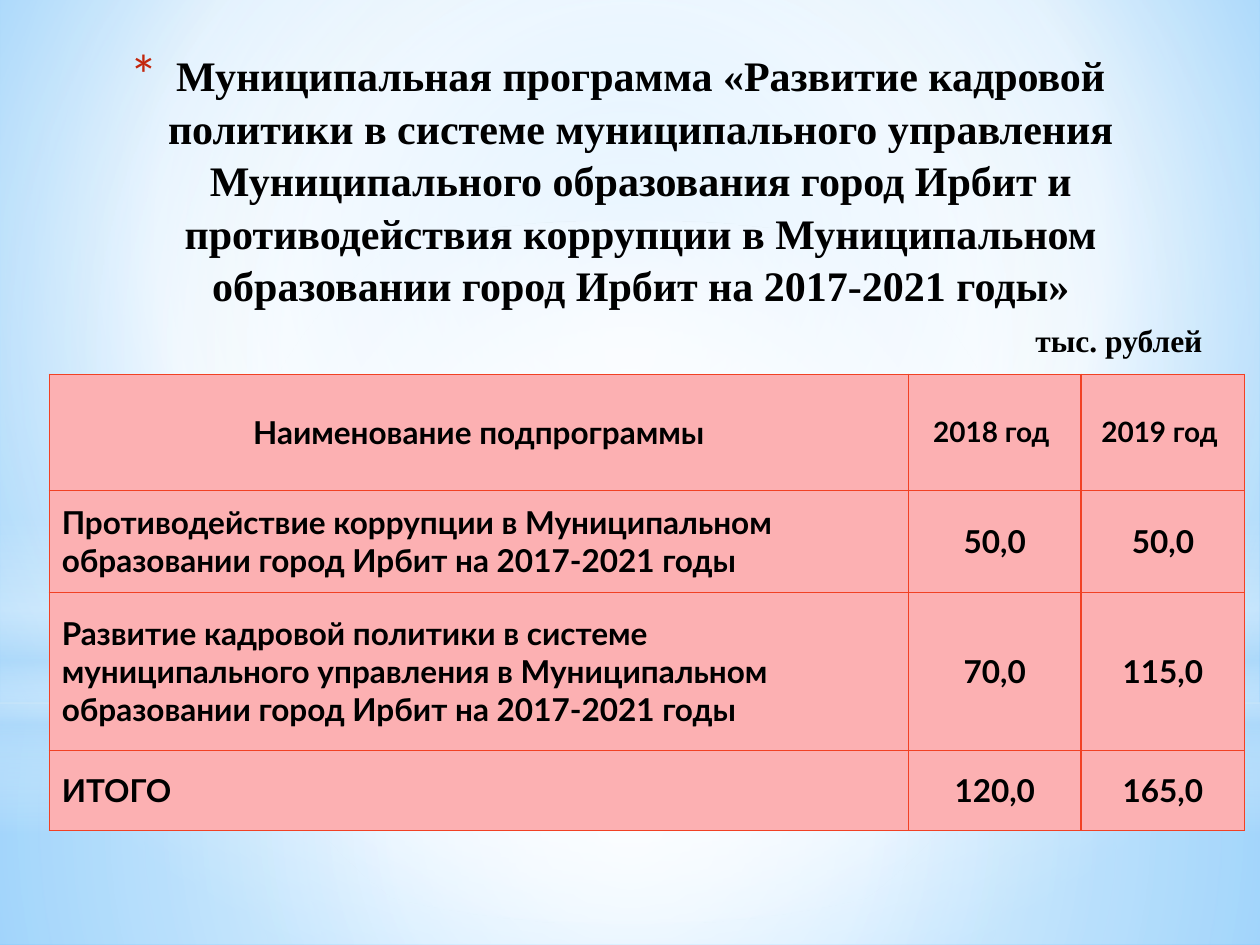
from typing import NamedTuple

from lxml import etree
from pptx import Presentation
from pptx.dml.color import RGBColor
from pptx.enum.shapes import MSO_SHAPE
from pptx.enum.text import MSO_ANCHOR, MSO_AUTO_SIZE, PP_ALIGN
from pptx.oxml import parse_xml
from pptx.util import Inches, Pt

RECT, OVAL = MSO_SHAPE.RECTANGLE, MSO_SHAPE.OVAL
LEFT, CENTER = PP_ALIGN.LEFT, PP_ALIGN.CENTER
MIDDLE = MSO_ANCHOR.MIDDLE
NS = "http://schemas.openxmlformats.org/drawingml/2006/main"
SERIF, SANS = "Times New Roman", "Lato"
BLACK, PINK, RED, BULLET = "000000", "FCB0B2", "F14124", "C3260C"
WHITE, SKY = "FFFFFF", "B4DCFA"
MIDPOINT = (50, 50, 50, 50)


class Stop(NamedTuple):
    pos: int
    color: str
    opacity: int = 100


class Glow(NamedTuple):
    shape: MSO_SHAPE
    top: float
    height: float
    stops: list[Stop]
    focus: tuple | None = MIDPOINT


BACKGROUND = [Stop(0, "9ED5FF"), Stop(60, WHITE), Stop(100, "5BB9FF")]
GLOWS = [
    Glow(RECT, 5.58, 1.92, [Stop(0, WHITE, 91), Stop(37, WHITE, 76), Stop(100, SKY, 79)]),
    Glow(RECT, 0, 5.58, [Stop(0, WHITE, 89), Stop(48, WHITE, 62), Stop(100, SKY, 79)]),
    Glow(RECT, 4.12, 2.5, [Stop(0, WHITE, 0), Stop(29, WHITE, 30), Stop(45, SKY, 40),
                           Stop(55, WHITE, 26), Stop(65, SKY, 60), Stop(100, WHITE, 0)], None),
    Glow(OVAL, 1.75, 5.58, [Stop(0, WHITE), Stop(56, WHITE, 0)]),
]

TITLE = ("Муниципальная программа «Развитие кадровой политики в системе муниципального "
         "управления Муниципального образования город Ирбит и противодействия коррупции "
         "в Муниципальном образовании город Ирбит на 2017-2021 годы»")
ROWS = [
    ("Наименование подпрограммы", "2018 год ", "2019 год "),
    ("Противодействие коррупции в Муниципальном образовании город Ирбит на 2017-2021 годы",
     "50,0", "50,0"),
    ("Развитие кадровой политики в системе муниципального управления в Муниципальном "
     "образовании город Ирбит на 2017-2021 годы", "70,0", "115,0"),
    ("ИТОГО", "120,0", "165,0"),
]
COL_WIDTHS = (6.82, 1.37, 1.3)
ROW_HEIGHTS = (0.92, 0.81, 1.26, 0.63)


def rgb(color: str) -> RGBColor:
    return RGBColor.from_string(color)


def set_gradient(fill, element, stops: list[Stop], focus: tuple | None) -> None:
    """Fill with a circular gradient around focus, or a vertical one without it."""
    fill.solid()
    fill.fore_color.rgb = rgb(WHITE)
    gs = "".join(
        f'<a:gs pos="{p * 1000}"><a:srgbClr val="{c}"><a:alpha val="{o * 1000}"/>'
        f'</a:srgbClr></a:gs>' for p, c, o in stops)
    if focus:
        l, t, r, b = (n * 1000 for n in focus)
        kind = (f'<a:path path="circle"><a:fillToRect l="{l}" t="{t}" r="{r}" b="{b}"/>'
                '</a:path>')
    else:
        kind = '<a:lin ang="5400000" scaled="0"/>'
    solid = next(element.iter(f"{{{NS}}}solidFill"))
    solid.getparent().replace(solid, parse_xml(
        f'<a:gradFill xmlns:a="{NS}" rotWithShape="1"><a:gsLst>{gs}</a:gsLst>{kind}</a:gradFill>'))


def draw_glow(s, glow: Glow, before) -> None:
    sp = s.shapes.add_shape(glow.shape, 0, Inches(glow.top), Inches(10), Inches(glow.height))
    sp.shadow.inherit = False
    sp.line.fill.background()
    set_gradient(sp.fill, sp._element, glow.stops, glow.focus)
    before._element.addprevious(sp._element)


def style(p, size: float, font: str, align: PP_ALIGN) -> None:
    p.alignment = align
    for r in p.runs:
        r.font.size, r.font.name, r.font.bold = Pt(size), font, True
        r.font.color.rgb = rgb(BLACK)


def add_bullet(p) -> None:
    pPr = p._p.get_or_add_pPr()
    pPr.set("marL", str(Inches(0.35)))
    pPr.set("indent", str(-Inches(0.35)))
    color = etree.SubElement(pPr, f"{{{NS}}}buClr")
    etree.SubElement(color, f"{{{NS}}}srgbClr", val=BULLET)
    etree.SubElement(pPr, f"{{{NS}}}buSzPct", val="128000")
    etree.SubElement(pPr, f"{{{NS}}}buFont", typeface=SANS)
    etree.SubElement(pPr, f"{{{NS}}}buChar", char="*")


def add_borders(cell) -> None:
    tcPr = cell._tc.get_or_add_tcPr()
    for side in ("lnL", "lnR", "lnT", "lnB"):
        ln = etree.SubElement(tcPr, f"{{{NS}}}{side}", w=str(Pt(0.75)))
        solid = etree.SubElement(ln, f"{{{NS}}}solidFill")
        etree.SubElement(solid, f"{{{NS}}}srgbClr", val=RED)


def draw_title(title) -> None:
    title.left, title.top = Inches(0.41), Inches(0.37)
    title.width, title.height = Inches(9), Inches(2.1)
    tf = title.text_frame
    tf.text = TITLE
    tf.word_wrap = True
    tf.auto_size = MSO_AUTO_SIZE.NONE
    tf.vertical_anchor = MIDDLE
    p = tf.paragraphs[0]
    add_bullet(p)
    p.line_spacing = 1.04
    style(p, 24, SERIF, CENTER)


def draw_table(s) -> None:
    table = s.shapes.add_table(len(ROWS), len(COL_WIDTHS), Inches(0.39), Inches(2.97),
                               Inches(sum(COL_WIDTHS)), Inches(sum(ROW_HEIGHTS))).table
    for column, width in zip(table.columns, COL_WIDTHS):
        column.width = Inches(width)
    for i, (texts, height) in enumerate(zip(ROWS, ROW_HEIGHTS)):
        table.rows[i].height = Inches(height)
        for j, text in enumerate(texts):
            cell = table.cell(i, j)
            cell.text = text
            cell.vertical_anchor = MIDDLE
            add_borders(cell)
            cell.fill.solid()
            cell.fill.fore_color.rgb = rgb(PINK)
            is_year = i == 0 and j > 0
            is_name = i > 0 and j == 0
            style(cell.text_frame.paragraphs[0], 16 if is_year else 18, SANS,
                  LEFT if is_name else CENTER)


def draw_unit(s) -> None:
    tf = s.shapes.add_textbox(Inches(8.12), Inches(2.5), Inches(1.54), Inches(0.4)).text_frame
    tf.text = "тыс. рублей"
    tf.word_wrap = False
    style(tf.paragraphs[0], 18, SERIF, LEFT)


def main() -> None:
    prs = Presentation()
    prs.slide_width, prs.slide_height = Inches(10), Inches(7.5)
    s = prs.slides.add_slide(prs.slide_layouts[5])
    set_gradient(s.background.fill, s._element, BACKGROUND, (20, 10, 20, 60))
    title = s.shapes.title
    for glow in GLOWS:
        draw_glow(s, glow, title)
    draw_title(title)
    draw_table(s)
    draw_unit(s)
    prs.save("out.pptx")


if __name__ == "__main__":
    main()
